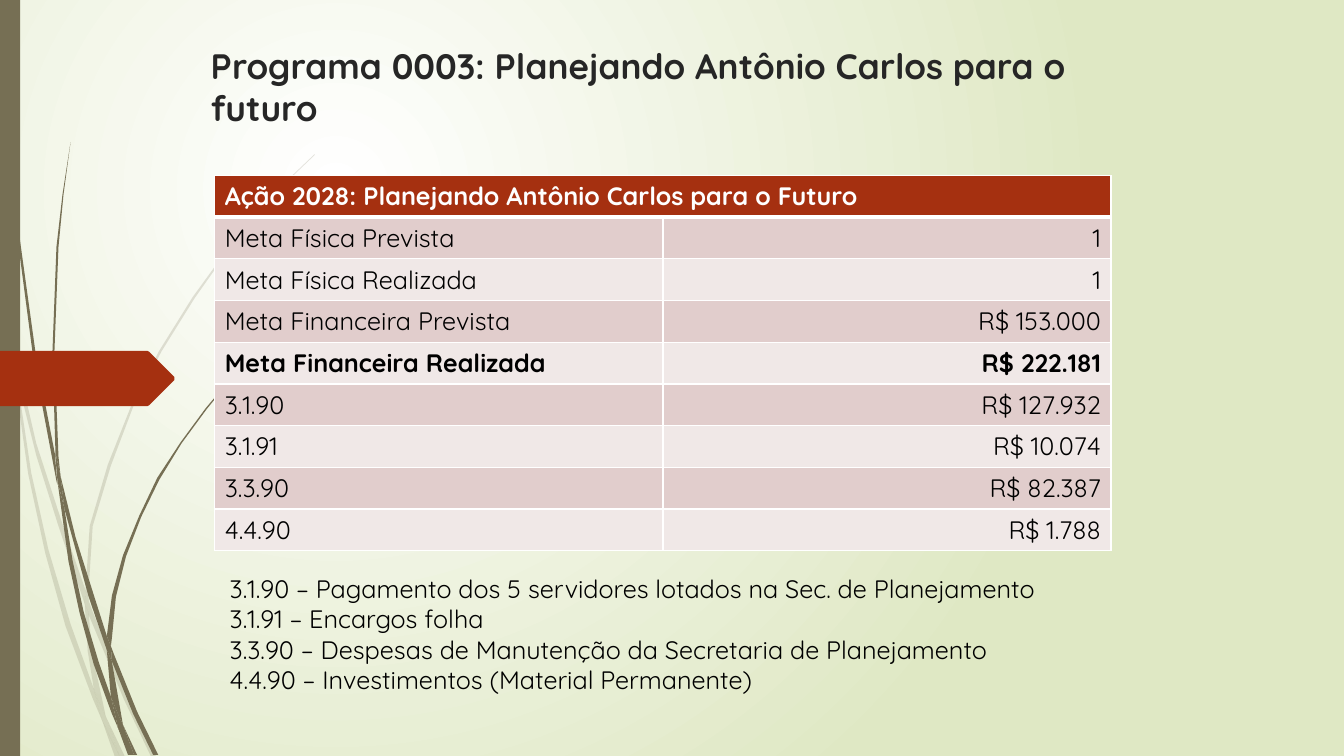
import pptx
import pptx.dml.color
import pptx.enum.shapes
import pptx.enum.text
import pptx.oxml
import pptx.oxml.ns
import pptx.util

RGBColor = pptx.dml.color.RGBColor
PP_ALIGN = pptx.enum.text.PP_ALIGN
qn = pptx.oxml.ns.qn

PX = 9144
FONT = "Quicksand"
WHITE = RGBColor(0xFF, 0xFF, 0xFF)
BLACK = RGBColor(0x00, 0x00, 0x00)
TITLE_INK = RGBColor(0x26, 0x26, 0x26)
PALE_GREEN = RGBColor(0xDF, 0xE8, 0xC4)
OLIVE = RGBColor(0x76, 0x6F, 0x54)
RUST = RGBColor(0xA5, 0x30, 0x10)
ROSE = RGBColor(0xE1, 0xCD, 0xCC)
PALE_ROSE = RGBColor(0xF0, 0xE8, 0xE7)

TITLE = "Programa 0003: Planejando Antônio Carlos para o futuro"
HEADER = "Ação 2028: Planejando Antônio Carlos para o Futuro"
BOLD_ROW = "Meta Financeira Realizada"
ROWS = [
    ("Meta Física Prevista", "1"),
    ("Meta Física Realizada", "1"),
    ("Meta Financeira Prevista", "R$ 153.000"),
    (BOLD_ROW, "R$ 222.181"),
    ("3.1.90", "R$ 127.932"),
    ("3.1.91", "R$ 10.074"),
    ("3.3.90", "R$ 82.387"),
    ("4.4.90", "R$ 1.788"),
]
NOTES = [
    "3.1.90 – Pagamento dos 5 servidores lotados na Sec. de Planejamento",
    "3.1.91 – Encargos folha",
    "3.3.90 – Despesas de Manutenção da Secretaria de Planejamento",
    "4.4.90 – Investimentos (Material Permanente)",
]

FAINT_BLADES = [
    [(11, 350), (9, 322), (0, 282), (0, 299), (10, 344)],
    [(58, 522), (84, 599), (85, 586), (62, 520), (36, 440), (14, 345), (17, 376), (36, 452)],
    [(92, 607), (88, 596), (88, 610), (123, 694), (150, 751), (155, 751), (127, 692)],
    [(119, 751), (124, 751), (105, 711)],
    [(93, 683), (70, 619), (48, 545), (31, 469), (17, 376), (11, 350), (28, 470), (45, 549),
     (65, 621), (92, 693), (101, 714), (99, 707)],
    [(84, 599), (87, 646), (93, 683), (96, 692), (105, 711), (91, 646), (88, 608)],
    [(88, 584), (92, 522), (110, 462), (132, 404), (160, 349), (193, 296), (229, 245),
     (268, 198), (290, 175), (312, 154), (312, 153), (289, 175), (268, 197), (228, 244),
     (191, 295), (158, 348), (130, 403), (107, 461), (89, 522), (85, 584), (85, 586), (88, 596)],
    [(101, 714), (114, 751), (119, 751)],
    [(88, 608), (88, 596), (85, 586), (84, 599)],
    [(96, 692), (93, 683), (99, 707), (101, 714), (119, 751), (105, 711)],
]
DARK_BLADES = [
    [(7, 110), (17, 233), (33, 355), (56, 477), (57, 481), (55, 457), (55, 453), (36, 355),
     (19, 232), (8, 109), (5, 48), (4, 0), (3, 0), (4, 48)],
    [(88, 592), (106, 645), (106, 631), (93, 590), (75, 533), (60, 472), (64, 505)],
    [(113, 649), (110, 641), (111, 656), (132, 708), (152, 749), (157, 749), (136, 706)],
    [(110, 691), (98, 657), (83, 607), (72, 556), (64, 505), (57, 477), (68, 557), (79, 608),
     (93, 659), (111, 708), (117, 722), (116, 717)],
    [(60, 472), (58, 453), (54, 349), (58, 245), (63, 193), (70, 141), (62, 193), (56, 245),
     (52, 349), (55, 449)],
    [(133, 749), (136, 749), (122, 719)],
    [(57, 477), (64, 505), (60, 472), (55, 449), (55, 453)],
    [(111, 633), (115, 592), (125, 552), (140, 513), (158, 476), (180, 440), (205, 406),
     (231, 374), (261, 344), (260, 344), (231, 373), (204, 405), (179, 439), (156, 474),
     (138, 512), (122, 551), (111, 591), (106, 631), (110, 641)],
    [(117, 722), (127, 749), (131, 749)],
    [(106, 645), (110, 691), (116, 706), (122, 719), (111, 656)],
    [(106, 645), (111, 656), (110, 641), (106, 631)],
    [(116, 706), (110, 691), (116, 717), (117, 722), (130, 749), (133, 749), (122, 719)],
]
ARROW = [(0, 348), (146, 348), (148, 349), (173, 374), (173, 377), (148, 402), (146, 403),
         (0, 403)]


def box(*lengths):
    return [n * PX for n in lengths]


def format_text(p, size, color, bold=False):
    for r in p.runs:
        r.font.name = FONT
        r.font.size = pptx.util.Pt(size)
        r.font.bold = bold
        r.font.color.rgb = color


def paint(sp, color):
    sp.shadow.inherit = False
    sp.fill.solid()
    sp.fill.fore_color.rgb = color
    sp.line.fill.background()


def set_background(s):
    fill = s.background.fill
    fill.gradient()
    for stop, color in zip(fill.gradient_stops, (WHITE, PALE_GREEN)):
        stop.color.rgb = color
    grad = s.element.find(".//" + qn("a:gradFill"))
    grad.remove(grad.find(qn("a:lin")))
    grad.append(pptx.oxml.parse_xml(
        f'<a:path {pptx.oxml.ns.nsdecls("a")} path="circle">'
        '<a:fillToRect l="50000" t="50000" r="100000" b="100000"/></a:path>'))


def add_outline(shapes, points, color):
    builder = shapes.build_freeform(*points[0], scale=PX)
    builder.add_line_segments(points[1:], close=True)
    sp = builder.convert_to_shape()
    paint(sp, color)
    return sp


def add_stalks(s, blades, alpha=100):
    group = s.shapes.add_group_shape()
    for points in blades:
        sp = add_outline(group.shapes, points, OLIVE)
        if alpha < 100:
            sp.element.spPr.find(qn("a:solidFill"))[0].append(pptx.oxml.parse_xml(
                f'<a:alpha {pptx.oxml.ns.nsdecls("a")} val="{alpha * 1000}"/>'))


def add_side_bar(s):
    kind = pptx.enum.shapes.MSO_SHAPE.RECTANGLE
    paint(s.shapes.add_shape(kind, *box(0, 0, 20, 750)), OLIVE)


def set_title(s):
    sp = s.shapes.title
    sp.left, sp.top, sp.width, sp.height = box(199, 57, 975, 76)
    tf = sp.text_frame
    tf.text = TITLE
    tf.word_wrap = True
    tf.auto_size = pptx.enum.text.MSO_AUTO_SIZE.NONE
    tf.vertical_anchor = pptx.enum.text.MSO_ANCHOR.BOTTOM
    tf.paragraphs[0].alignment = PP_ALIGN.LEFT
    format_text(tf.paragraphs[0], 25.2, TITLE_INK, True)


def set_cell(cell, text, fill, color=BLACK, bold=False, align=PP_ALIGN.LEFT, top=1, bottom=1):
    tcPr = cell._tc.get_or_add_tcPr()
    for side, width in zip("LRTB", (1, 1, top, bottom)):
        tcPr.append(pptx.oxml.parse_xml(
            f'<a:ln{side} {pptx.oxml.ns.nsdecls("a")} w="{width * 12700}">'
            f'<a:solidFill><a:srgbClr val="{WHITE}"/></a:solidFill></a:ln{side}>'))
    cell.fill.solid()
    cell.fill.fore_color.rgb = fill
    p = cell.text_frame.paragraphs[0]
    p.text = text
    p.alignment = align
    format_text(p, 18, color, bold)


def add_goals_table(s):
    table = s.shapes.add_table(len(ROWS) + 1, 2, *box(213, 174, 889, 365)).table
    table.cell(0, 0).merge(table.cell(0, 1))
    for col, text in enumerate((HEADER, "")):
        set_cell(table.cell(0, col), text, RUST, WHITE, True, bottom=3)
    for i, row in enumerate(ROWS, 1):
        fill = ROSE if i % 2 else PALE_ROSE
        for col, align in enumerate((PP_ALIGN.LEFT, PP_ALIGN.RIGHT)):
            set_cell(table.cell(i, col), row[col], fill, bold=row[0] == BOLD_ROW,
                     align=align, top=3 if i == 1 else 1)


def add_notes_text(s):
    tf = s.shapes.add_textbox(*box(218, 564, 885, 131)).text_frame
    tf.word_wrap = True
    tf.text = "\n".join(NOTES)
    for p in tf.paragraphs:
        format_text(p, 18, BLACK)


def main():
    prs = pptx.Presentation()
    prs.slide_width, prs.slide_height = box(1333, 750)
    s = prs.slides.add_slide(prs.slide_layouts[5])
    set_background(s)
    add_stalks(s, FAINT_BLADES, alpha=20)
    add_stalks(s, DARK_BLADES)
    add_side_bar(s)
    add_outline(s.shapes, ARROW, RUST)
    set_title(s)
    add_goals_table(s)
    add_notes_text(s)
    prs.save("out.pptx")


if __name__ == "__main__":
    main()
